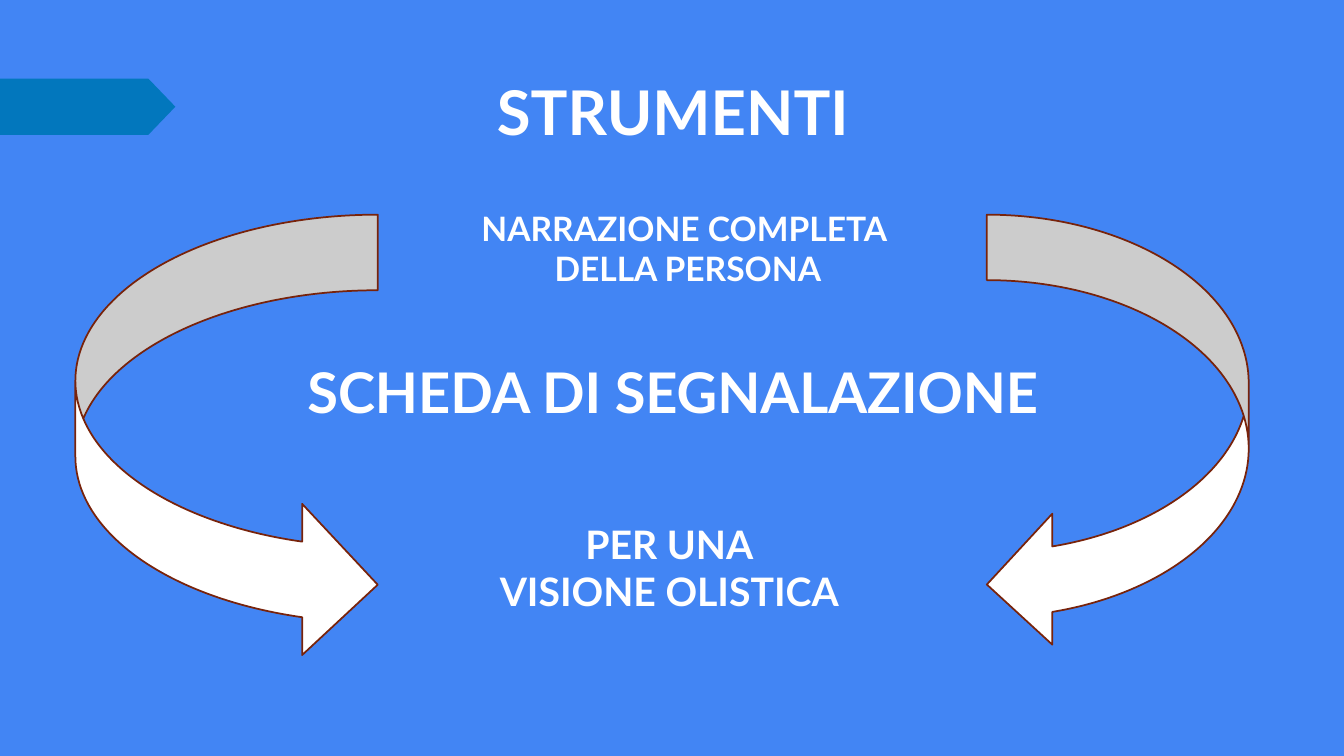
"""Builds the STRUMENTI slide with its two curved arrows."""
from pptx import Presentation
from pptx import util as u
from pptx.dml.color import RGBColor
from pptx.enum import shapes, text

BLUE = RGBColor(0x42, 0x85, 0xF4)
TEAL = RGBColor(0x02, 0x77, 0xBD)
WHITE = RGBColor(0xFF, 0xFF, 0xFF)
BROWN = RGBColor(0x78, 0x23, 0x0B)


class SlideBuilder:
    """Holds the text style and the slide being built."""

    def __init__(self, prs, font, color):
        self.font, self.color = font, color
        self.s = prs.slides.add_slide(prs.slide_layouts[5])

    def background(self, color):
        """Fill the slide background."""
        fill = self.s.background.fill
        fill.solid()
        fill.fore_color.rgb = color

    def add_lines(self, sp, lines, size):
        """Put centred bold lines in a shape."""
        tf = sp.text_frame
        tf.word_wrap = True
        tf.auto_size = text.MSO_AUTO_SIZE.NONE
        tf.vertical_anchor = text.MSO_ANCHOR.TOP
        for i, line in enumerate(lines):
            p = tf.add_paragraph() if i else tf.paragraphs[0]
            p.alignment = text.PP_ALIGN.CENTER
            r = p.add_run()
            r.text = line
            r.font.name, r.font.size, r.font.bold = self.font, u.Pt(size), True
            r.font.color.rgb = self.color

    def title(self, line, size, box):
        """Place the title placeholder in front and fill it."""
        sp = self.s.shapes.title
        sp.left, sp.top, sp.width, sp.height = map(u.Cm, box)
        self.s.shapes.element.append(sp.element)
        self.add_lines(sp, [line], size)

    def label(self, lines, size, box):
        """Add a text box."""
        self.add_lines(self.s.shapes.add_textbox(*map(u.Cm, box)), lines, size)

    def shape(self, kind, box, adjustments, fill, line=None):
        """Add a preset shape."""
        sp = self.s.shapes.add_shape(kind, *map(u.Cm, box))
        sp.shadow.inherit = False
        for i, value in enumerate(adjustments):
            sp.adjustments[i] = value
        sp.fill.solid()
        sp.fill.fore_color.rgb = fill
        if line is None:
            sp.line.fill.background()
        else:
            sp.line.color.rgb = line
            sp.line.width = u.Pt(1.25)


def main():
    """Build and save the slide."""
    prs = Presentation()
    prs.slide_width, prs.slide_height = u.Cm(33.87), u.Cm(19.05)
    b = SlideBuilder(prs, "Lato", WHITE)
    b.background(BLUE)
    b.shape(shapes.MSO_SHAPE.PENTAGON, (0, 1.98, 4.42, 1.42), [0.48], TEAL)
    b.title("STRUMENTI", 44, (1.96, 1.73, 30, 3.89))
    b.label(["SCHEDA DI SEGNALAZIONE"], 40, (4.7, 8.89, 24.51, 2.82))
    b.label(["NARRAZIONE COMPLETA ", "DELLA PERSONA"], 24, (10.26, 5.11, 14.15, 2.51))
    b.label(["PER UNA ", "VISIONE OLISTICA "], 28, (6.71, 12.98, 20.52, 2.9))
    for kind, box in (
        (shapes.MSO_SHAPE.CURVED_RIGHT_ARROW, (1.9, 5.41, 7.62, 11.23)),
        (shapes.MSO_SHAPE.CURVED_LEFT_ARROW, (24.87, 5.41, 6.6, 10.97)),
    ):
        b.shape(kind, box, (0.25, 0.5, 0.25), WHITE, BROWN)
    prs.save("out.pptx")


if __name__ == "__main__":
    main()
